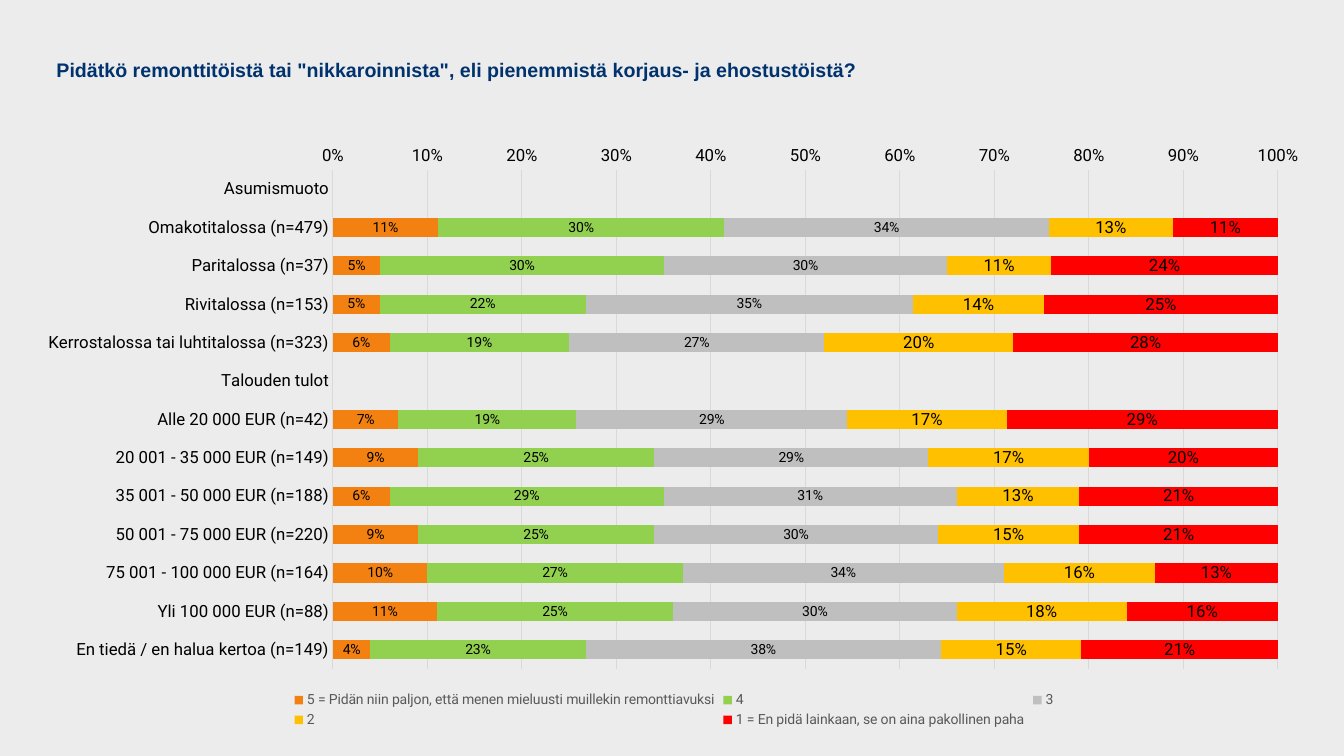
from lxml import etree
from pptx import Presentation
from pptx.chart import data
from pptx.dml import color
from pptx.enum import chart as kinds, text
from pptx.oxml import ns
from pptx.util import Inches, Pt

CATEGORIES = [
    "Asumismuoto", "Omakotitalossa (n=479)", "Paritalossa (n=37)",
    "Rivitalossa (n=153)", "Kerrostalossa tai luhtitalossa (n=323)",
    "Talouden tulot", "Alle 20 000 EUR (n=42)", "20 001 - 35 000 EUR (n=149)",
    "35 001 - 50 000 EUR (n=188)", "50 001 - 75 000 EUR (n=220)",
    "75 001 - 100 000 EUR (n=164)", "Yli 100 000 EUR (n=88)",
    "En tiedä / en halua kertoa (n=149)",
]
SERIES = [
    ("5 = Pidän niin paljon, että menen mieluusti muillekin remonttiavuksi", "F38112", 10,
     [None, 0.11, 0.05, 0.05, 0.06, None, 0.07, 0.09, 0.06, 0.09, 0.1, 0.11, 0.04]),
    ("4", "92D050", 10,
     [None, 0.3, 0.3, 0.22, 0.19, None, 0.19, 0.25, 0.29, 0.25, 0.27, 0.25, 0.23]),
    ("3", "BFBFBF", 10,
     [None, 0.34, 0.3, 0.35, 0.27, None, 0.29, 0.29, 0.31, 0.3, 0.34, 0.3, 0.38]),
    ("2", "FFC000", 12,
     [None, 0.13, 0.11, 0.14, 0.2, None, 0.17, 0.17, 0.13, 0.15, 0.16, 0.18, 0.15]),
    ("1 = En pidä lainkaan, se on aina pakollinen paha", "FF0000", 12,
     [None, 0.11, 0.24, 0.25, 0.28, None, 0.29, 0.2, 0.21, 0.21, 0.13, 0.16, 0.21]),
]


def rgb(value):
    return color.RGBColor.from_string(value)


class SurveySlide:
    title_font = "Arial"
    chart_font = "Roboto"
    navy = "00326E"
    ink = "000000"
    grid = "D9D9D9"

    def __init__(self, deck, background):
        self.page = deck.slides.add_slide(deck.slide_layouts[6])
        fill = self.page.background.fill
        fill.solid()
        fill.fore_color.rgb = rgb(background)

    def style(self, font, name, size, hue, bold=False):
        font.name = name
        font.size = Pt(size)
        font.bold = bold
        font.color.rgb = rgb(hue)

    def title(self, wording, left, top, width, height):
        box = self.page.shapes.add_textbox(
            Inches(left), Inches(top), Inches(width), Inches(height))
        frame = box.text_frame
        frame.margin_left = frame.margin_right = 0
        frame.margin_top = frame.margin_bottom = 0
        frame.word_wrap = True
        frame.vertical_anchor = text.MSO_ANCHOR.TOP
        para = frame.paragraphs[0]
        para.line_spacing = 0.8
        span = para.add_run()
        span.text = wording
        self.style(span.font, self.title_font, 14, self.navy, True)

    def bars(self, categories, series, left, top, width, height):
        table = data.CategoryChartData(number_format="0%")
        table.categories = categories
        for name, hue, size, values in series:
            table.add_series(name, values)
        chart = self.page.shapes.add_chart(
            kinds.XL_CHART_TYPE.BAR_STACKED_100, Inches(left), Inches(top),
            Inches(width), Inches(height), table).chart
        self.style(chart.font, self.chart_font, 10, self.ink)
        chart.has_title = False
        plot = chart.plots[0]
        plot.gap_width = 100
        plot.overlap = 100
        plot.vary_by_categories = False
        for bar, (name, hue, size, values) in zip(plot.series, series):
            bar.format.fill.solid()
            bar.format.fill.fore_color.rgb = rgb(hue)
            labels = bar.data_labels
            labels.show_value = True
            labels.number_format = "0%"
            labels.number_format_is_linked = False
            labels.position = kinds.XL_LABEL_POSITION.CENTER
            self.style(labels.font, self.chart_font, size, self.ink)
        self.axes(chart)
        self.legend(chart)
        self.plot_layout(chart, x=0.238, y=0.06, w=0.726, h=0.835)

    def axes(self, chart):
        for axis in (chart.category_axis, chart.value_axis):
            axis.major_tick_mark = kinds.XL_TICK_MARK.NONE
            axis.minor_tick_mark = kinds.XL_TICK_MARK.NONE
            self.style(axis.tick_labels.font, self.chart_font, 12, self.ink)
        answers, share = chart.category_axis, chart.value_axis
        answers.reverse_order = True
        share.minimum_scale = 0
        share.maximum_scale = 1
        share.major_unit = 0.1
        share.tick_labels.number_format = "0%"
        share.tick_labels.number_format_is_linked = False
        share.format.line.fill.background()
        share.has_major_gridlines = True
        for line in (answers.format.line, share.major_gridlines.format.line):
            line.color.rgb = rgb(self.grid)
            line.width = Pt(0.75)

    def legend(self, chart):
        chart.has_legend = True
        chart.legend.position = kinds.XL_LEGEND_POSITION.BOTTOM
        chart.legend.include_in_layout = False
        self.style(chart.legend.font, self.chart_font, 10, "595959")

    def plot_layout(self, chart, **shares):
        area = chart.element.find(".//" + ns.qn("c:plotArea"))
        for old in area.findall(ns.qn("c:layout")):
            area.remove(old)
        layout = etree.Element(ns.qn("c:layout"))
        area.insert(0, layout)
        manual = etree.SubElement(layout, ns.qn("c:manualLayout"))
        settings = {"layoutTarget": "inner", "xMode": "edge", "yMode": "edge", **shares}
        for tag, value in settings.items():
            etree.SubElement(manual, ns.qn("c:" + tag), val=str(value))


def main():
    deck = Presentation()
    deck.slide_width = Inches(13.33)
    deck.slide_height = Inches(7.5)
    slide = SurveySlide(deck, "ECECED")
    slide.title('Pidätkö remonttitöistä tai "nikkaroinnista", eli pienemmistä '
                "korjaus- ja ehostustöistä?", 0.56, 0.62, 12.21, 0.24)
    slide.bars(CATEGORIES, SERIES, 0.23, 1.33, 12.91, 5.93)
    deck.save("out.pptx")


if __name__ == "__main__":
    main()
